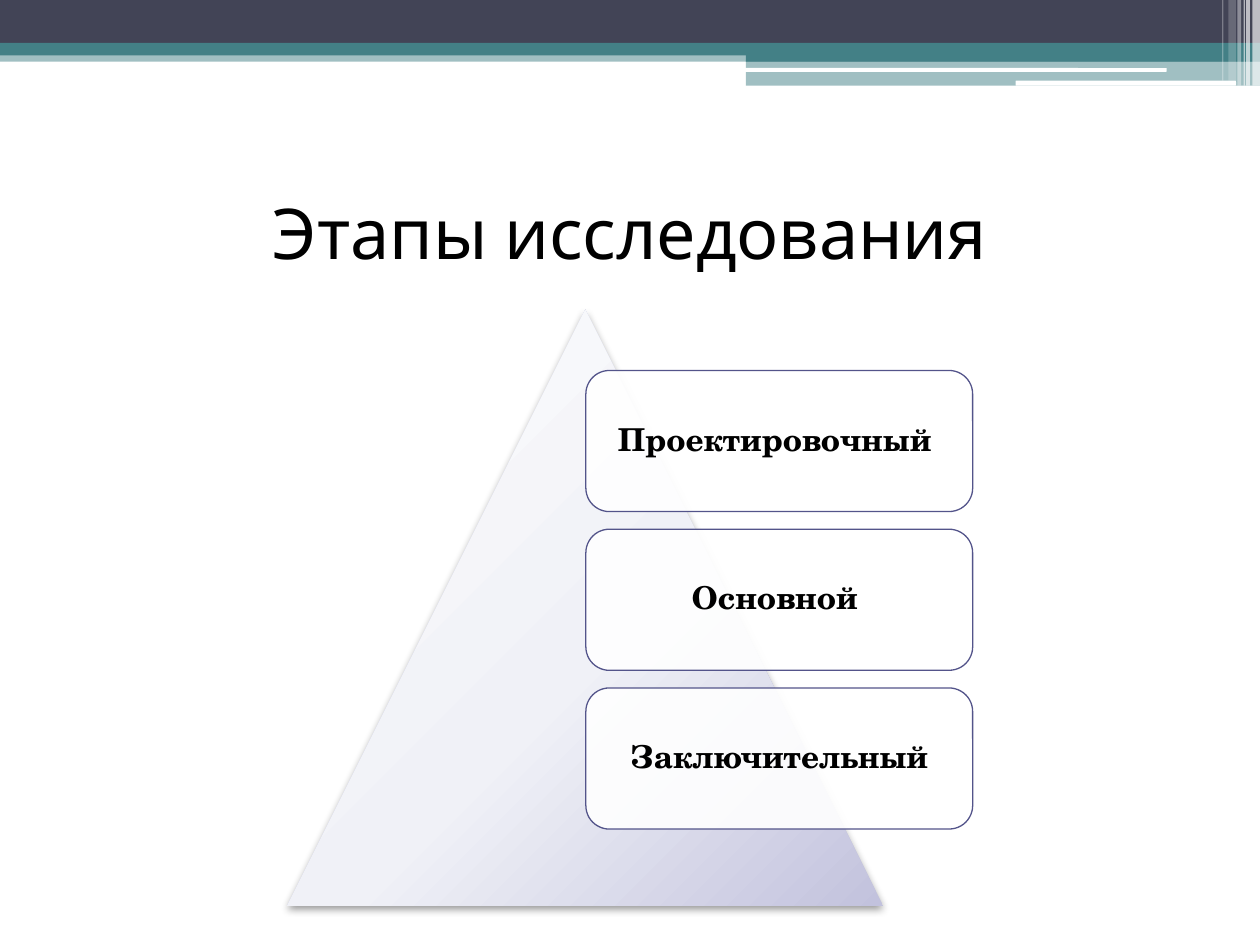
from dataclasses import dataclass

from lxml import etree
from pptx import Presentation
from pptx.dml.color import RGBColor
from pptx.enum.shapes import MSO_SHAPE
from pptx.enum.text import MSO_ANCHOR, PP_ALIGN
from pptx.oxml import parse_xml
from pptx.oxml.ns import nsdecls, qn
from pptx.util import Inches, Pt

RECT = MSO_SHAPE.RECTANGLE
ROUND = MSO_SHAPE.ROUNDED_RECTANGLE
CONE = MSO_SHAPE.ISOSCELES_TRIANGLE
MIDDLE = MSO_ANCHOR.MIDDLE
CENTER = PP_ALIGN.CENTER


@dataclass
class Theme:
    dark: str = "424456"
    teal: str = "438086"
    edge: str = "53548A"
    white: str = "FFFFFF"
    ink: str = "000000"
    fade: tuple = ((0, "FEFEFE"), (55, "F0F1F7"), (100, "C2C2DD"))
    head: str = "Karla"
    body: str = "TeX Gyre Schola"
    big: int = 40
    small: int = 18


theme = Theme()
deck = Presentation()
deck.slide_width, deck.slide_height = Inches(10), Inches(7.5)
slide = deck.slides.add_slide(deck.slide_layouts[6])


def draw(kind, box, color=None, alpha=100):
    shape = slide.shapes.add_shape(kind, *map(Inches, box))
    shape.shadow.inherit = False
    shape.line.fill.background()
    if color:
        shape.fill.solid()
        shape.fill.fore_color.rgb = RGBColor.from_string(color)
    if alpha < 100:
        tone = shape.element.spPr.find(qn("a:solidFill"))[0]
        etree.SubElement(tone, qn("a:alpha"), val=str(alpha * 1000))
    return shape


def write(shape, text, font, size, bold=False, inset=0.1, space=1.0):
    frame = shape.text_frame
    frame.word_wrap = True
    frame.vertical_anchor = MIDDLE
    frame.margin_left = frame.margin_right = Inches(inset)
    frame.margin_top = frame.margin_bottom = Inches(inset)
    para = frame.paragraphs[0]
    para.alignment = CENTER
    para.line_spacing = space
    run = para.add_run()
    run.text = text
    run.font.name = font
    run.font.size = Pt(size)
    run.font.bold = bold
    run.font.color.rgb = RGBColor.from_string(theme.ink)


bands = [
    (0, 0.4, 10, 0.09, theme.teal, 50),
    (0, 0, 10, 0.34, theme.dark, 100),
    (0, 0.34, 10, 0.1, theme.teal, 100),
    (5.92, 0.39, 4.08, 0.1, theme.teal, 100),
    (5.92, 0.48, 4.08, 0.2, theme.teal, 50),
]
for *box, color, alpha in bands:
    draw(RECT, box, color, alpha)

for box in [(5.91, 0.54, 3.35, 0.03), (8.06, 0.64, 1.75, 0.04)]:
    draw(ROUND, box, theme.white)

stripes = [
    (9.94, 0.06, 0.68, 65),
    (9.89, 0.03, 0.68, 65),
    (9.87, 0.01, 0.68, 60),
    (9.82, 0.03, 0.68, 40),
    (9.75, 0.06, 0.64, 20),
    (9.7, 0.01, 0.64, 30),
]
for left, width, height, alpha in stripes:
    draw(RECT, (left, 0, width, height), theme.white, alpha)

title = slide.shapes.add_textbox(*map(Inches, (0.5, 1.25, 9, 1.17)))
write(title, "Этапы исследования", theme.head, theme.big)

cone = draw(CONE, (2.28, 2.46, 4.73, 4.73))
stops = "".join(
    f'<a:gs pos="{spot * 1000}"><a:srgbClr val="{color}"/></a:gs>'
    for spot, color in theme.fade
)
props = cone.element.spPr
props.find(qn("a:prstGeom")).addnext(parse_xml(
    f'<a:gradFill {nsdecls("a")} rotWithShape="1"><a:gsLst>{stops}</a:gsLst>'
    '<a:path path="circle"><a:fillToRect l="-40000" t="-90000" '
    'r="140000" b="190000"/></a:path></a:gradFill>'
))
props.find(qn("a:effectLst")).append(parse_xml(
    f'<a:outerShdw {nsdecls("a")} blurRad="{Pt(4.1)}" dist="{Pt(2)}" '
    f'dir="5400000" rotWithShape="0"><a:srgbClr val="{theme.ink}">'
    '<a:alpha val="40000"/></a:srgbClr></a:outerShdw>'
))

steps = ["Проектировочный ", "Основной ", "Заключительный"]
for row, step in enumerate(steps):
    card = draw(ROUND, (4.65, 2.94 + row * 1.26, 3.07, 1.12), theme.white, 90)
    card.line.color.rgb = RGBColor.from_string(theme.edge)
    card.line.width = Pt(0.75)
    write(card, step, theme.body, theme.small, bold=True, inset=0.07, space=0.9)

deck.save("out.pptx")
